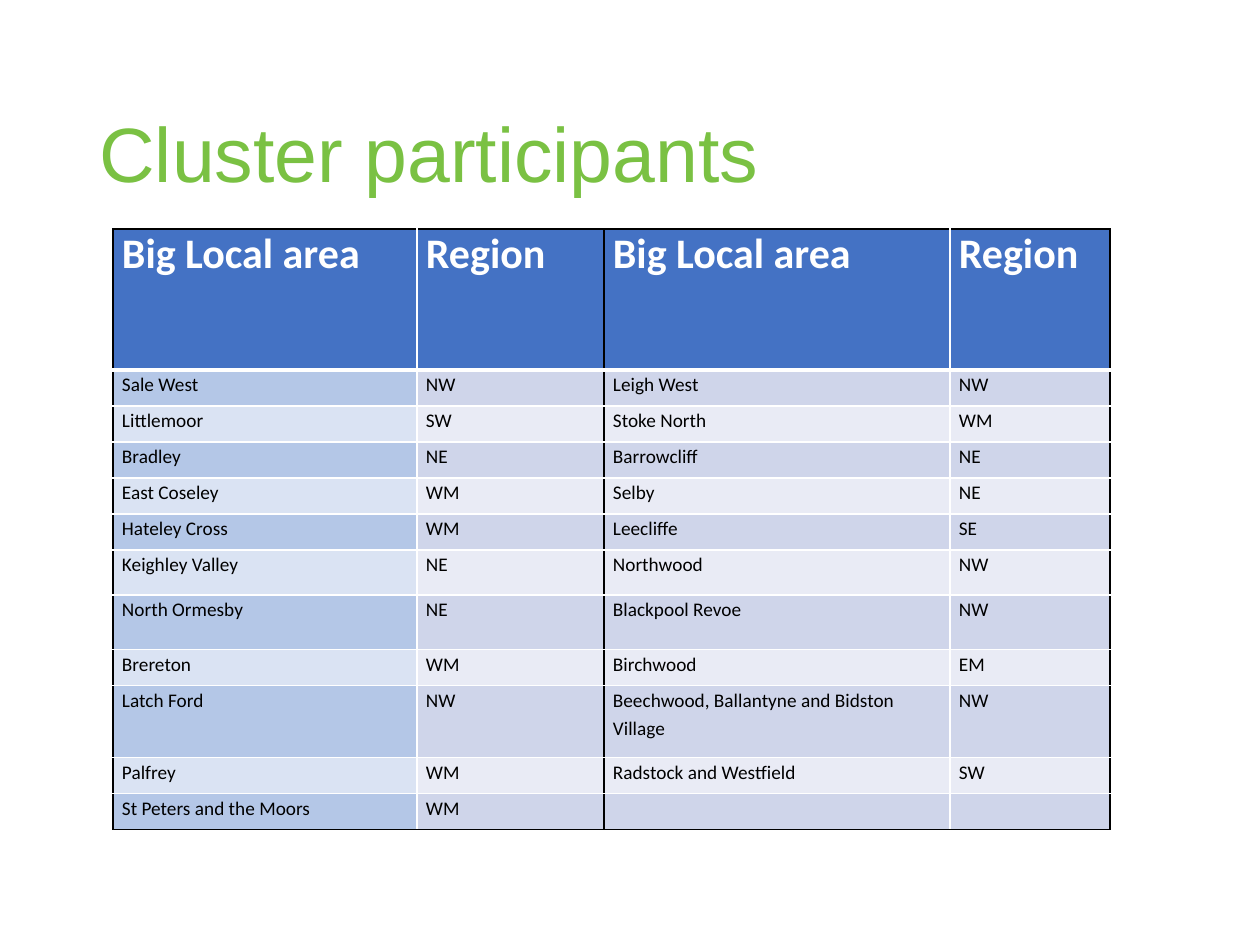
from dataclasses import dataclass

from lxml import etree
from pptx import Presentation
from pptx.dml.color import RGBColor
from pptx.enum.text import MSO_ANCHOR
from pptx.oxml.ns import qn
from pptx.util import Emu, Pt

PX_PER_INCH = 126
MIDDLE = MSO_ANCHOR.MIDDLE

GREEN = RGBColor(0x7A, 0xC1, 0x43)
BLACK = RGBColor(0x00, 0x00, 0x00)
WHITE = RGBColor(0xFF, 0xFF, 0xFF)
HEADER_BLUE = RGBColor(0x44, 0x72, 0xC4)
FIRST_COLUMN_BANDS = (RGBColor(0xB4, 0xC7, 0xE7), RGBColor(0xDA, 0xE3, 0xF3))
BODY_BANDS = (RGBColor(0xCF, 0xD5, 0xEA), RGBColor(0xE9, 0xEB, 0xF5))

HEADINGS = ("Big Local area", "Region", "Big Local area", "Region")
COLUMN_WIDTHS = (304, 187, 346, 160)
HEADER_HEIGHT = 141
ROW_HEIGHT = 36


@dataclass(frozen=True)
class ParticipantRow:
    left_area: str
    left_region: str
    right_area: str = ""
    right_region: str = ""
    height: int = ROW_HEIGHT

    def texts(self) -> tuple[str, ...]:
        return self.left_area, self.left_region, self.right_area, self.right_region


@dataclass(frozen=True)
class TextStyle:
    size: int
    color: RGBColor
    font: str = "Calibri"
    bold: bool = False
    line_spacing: float = 1.0


TITLE_STYLE = TextStyle(44, GREEN, font="Arial", line_spacing=0.9)
HEADER_STYLE = TextStyle(24, WHITE, bold=True)
BODY_STYLE = TextStyle(11, BLACK, line_spacing=1.15)

PARTICIPANTS = (
    ParticipantRow("Sale West", "NW", "Leigh West", "NW"),
    ParticipantRow("Littlemoor", "SW", "Stoke North", "WM"),
    ParticipantRow("Bradley", "NE", "Barrowcliff", "NE"),
    ParticipantRow("East Coseley", "WM", "Selby", "NE"),
    ParticipantRow("Hateley Cross", "WM", "Leecliffe", "SE"),
    ParticipantRow("Keighley Valley", "NE", "Northwood", "NW", 45),
    ParticipantRow("North Ormesby", "NE", "Blackpool Revoe", "NW", 55),
    ParticipantRow("Brereton", "WM", "Birchwood", "EM"),
    ParticipantRow("Latch Ford", "NW", "Beechwood, Ballantyne and Bidston Village", "NW", 72),
    ParticipantRow("Palfrey", "WM", "Radstock and Westfield", "SW"),
    ParticipantRow("St Peters and the Moors", "WM"),
)


def px(length: int) -> Emu:
    return Emu(round(length * 914400 / PX_PER_INCH))


def write_text(text_frame, text: str, style: TextStyle) -> None:
    text_frame.text = text
    paragraph = text_frame.paragraphs[0]
    paragraph.line_spacing = style.line_spacing
    for run in paragraph.runs:
        run.font.name = style.font
        run.font.size = Pt(style.size)
        run.font.bold = style.bold
        run.font.color.rgb = style.color
    if not text:
        # The end mark keeps an empty cell as low as its row.
        etree.SubElement(paragraph._p, qn("a:endParaRPr"), sz=str(style.size * 100))


def add_border(cell, side: str, color: RGBColor, points: int) -> None:
    line = etree.SubElement(cell._tc.get_or_add_tcPr(), qn(f"a:ln{side}"), w=str(Pt(points)))
    fill = etree.SubElement(line, qn("a:solidFill"))
    etree.SubElement(fill, qn("a:srgbClr"), val=str(color))


def add_borders(cell, row: int, column: int) -> None:
    """Outline each area/region pair in black, with white lines inside."""
    starts_pair = column % 2 == 0
    add_border(cell, "L", BLACK if starts_pair else WHITE, 1)
    add_border(cell, "R", WHITE if starts_pair else BLACK, 1)
    add_border(cell, "T", BLACK if row == 0 else WHITE, 3 if row == 1 else 1)
    add_border(cell, "B", BLACK if row == len(PARTICIPANTS) else WHITE, 3 if row == 0 else 1)


def cell_color(row: int, column: int) -> RGBColor:
    if row == 0:
        return HEADER_BLUE
    bands = FIRST_COLUMN_BANDS if column == 0 else BODY_BANDS
    return bands[(row - 1) % 2]


def add_title(slide) -> None:
    title = slide.shapes.add_textbox(px(87), px(83), px(1086), px(149))
    title.text_frame.word_wrap = True
    title.text_frame.vertical_anchor = MIDDLE
    write_text(title.text_frame, "Cluster participants", TITLE_STYLE)


def add_participants_table(slide) -> None:
    heights = [HEADER_HEIGHT, *(participant.height for participant in PARTICIPANTS)]
    texts = [HEADINGS, *(participant.texts() for participant in PARTICIPANTS)]
    table = slide.shapes.add_table(
        len(heights), len(COLUMN_WIDTHS),
        px(113), px(229), px(sum(COLUMN_WIDTHS)), px(sum(heights)),
    ).table
    table.horz_banding = False
    for column, width in zip(table.columns, COLUMN_WIDTHS):
        column.width = px(width)
    for row, height in zip(table.rows, heights):
        row.height = px(height)

    for row, row_texts in enumerate(texts):
        for column, text in enumerate(row_texts):
            cell = table.cell(row, column)
            cell.margin_left = cell.margin_right = px(9)
            cell.margin_top = cell.margin_bottom = 0
            add_borders(cell, row, column)
            cell.fill.solid()
            cell.fill.fore_color.rgb = cell_color(row, column)
            write_text(cell.text_frame, text, HEADER_STYLE if row == 0 else BODY_STYLE)


def main() -> None:
    presentation = Presentation()
    presentation.slide_width = px(1260)
    presentation.slide_height = px(945)
    slide = presentation.slides.add_slide(presentation.slide_layouts[6])
    add_title(slide)
    add_participants_table(slide)
    presentation.save("out.pptx")


if __name__ == "__main__":
    main()
